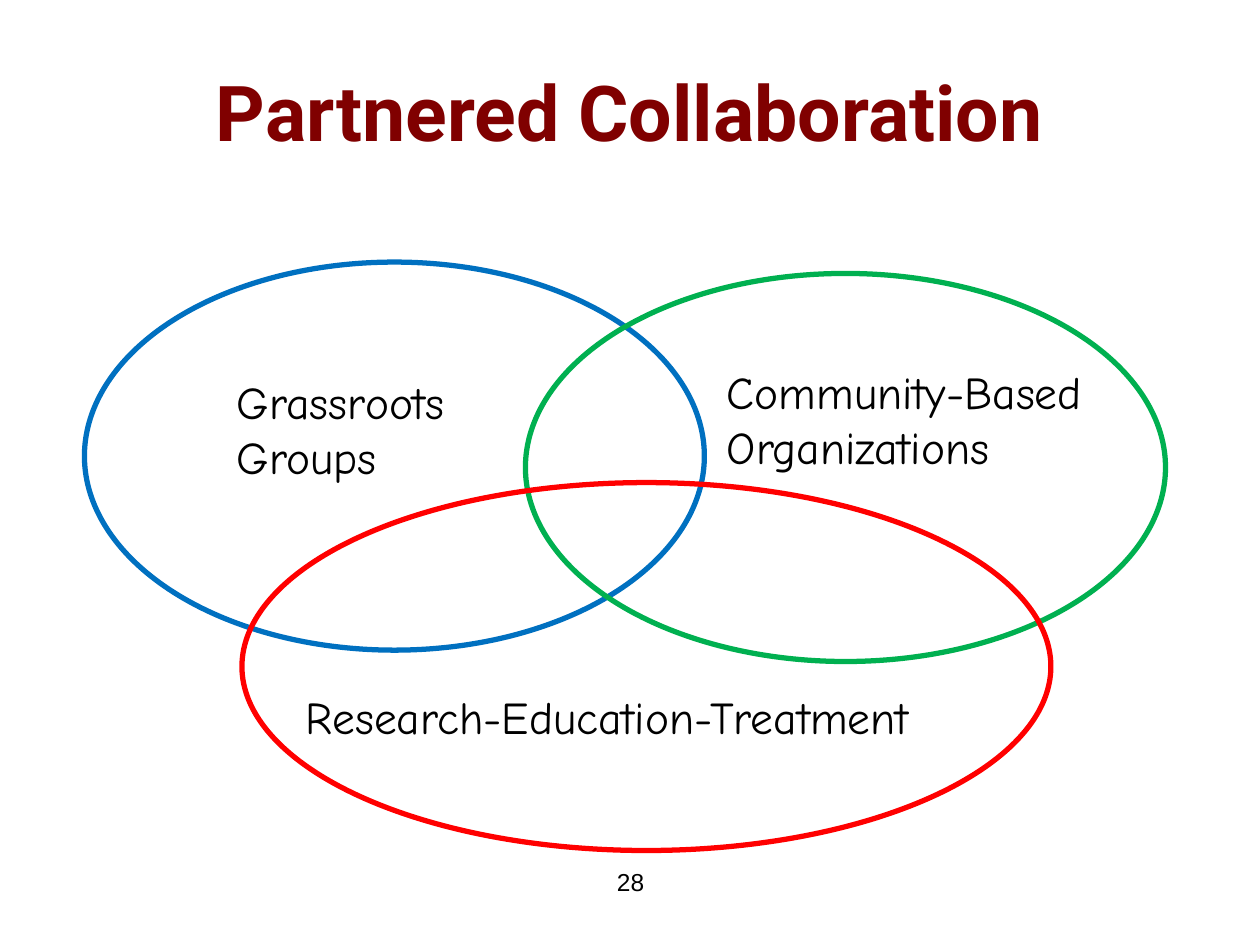
from pptx import Presentation
from pptx.dml.color import RGBColor
from pptx.enum.shapes import MSO_SHAPE
from pptx.enum.text import MSO_ANCHOR, MSO_AUTO_SIZE, PP_ALIGN
from pptx.util import Inches, Pt


def color(value):
    return RGBColor.from_string(value)


def write(paragraph, text, font_name, size, value="000000", bold=False):
    span = paragraph.add_run()
    span.text = text
    span.font.name = font_name
    span.font.size = Pt(size)
    span.font.bold = bold
    span.font.color.rgb = color(value)


deck = Presentation()
deck.slide_width = Inches(10)
deck.slide_height = Inches(7.5)
page = deck.slides.add_slide(deck.slide_layouts[5])

title = page.shapes.title
title.left, title.top = Inches(0.75), Inches(0.25)
title.width, title.height = Inches(8.5), Inches(1.25)
title.text_frame.vertical_anchor = MSO_ANCHOR.MIDDLE
heading = title.text_frame.paragraphs[0]
heading.alignment = PP_ALIGN.CENTER
write(heading, "Partnered Collaboration", "Roboto", 44, "800000", True)

ellipses = [
    (0.67, 2.08, 4.92, 3.08, "0070C0"),
    (4.17, 2.17, 5.08, 3.08, "00B050"),
    (1.92, 3.83, 6.42, 2.92, "FF0000"),
]
for left, top, width, height, outline in ellipses:
    ellipse = page.shapes.add_shape(
        MSO_SHAPE.OVAL, Inches(left), Inches(top), Inches(width), Inches(height)
    )
    ellipse.shadow.inherit = False
    ellipse.fill.background()
    ellipse.line.color.rgb = color(outline)
    ellipse.line.width = Pt(3)

labels = [
    (["Research-Education-Treatment"], 2.33, 5.42, 5.72, 0.53, False),
    (["Grassroots Groups"], 1.78, 2.92, 2.25, 0.97, True),
    (["Community-Based", "Organizations"], 5.67, 2.84, 3.26, 0.97, False),
]
for lines, left, top, width, height, wrap in labels:
    box = page.shapes.add_textbox(Inches(left), Inches(top), Inches(width), Inches(height))
    frame = box.text_frame
    frame.word_wrap = wrap
    frame.auto_size = MSO_AUTO_SIZE.SHAPE_TO_FIT_TEXT
    for index, line in enumerate(lines):
        para = frame.add_paragraph() if index else frame.paragraphs[0]
        write(para, line, "Comic Neue", 26)

number_box = page.shapes.add_textbox(Inches(3.42), Inches(6.83), Inches(3.17), Inches(0.52))
number_box.text_frame.word_wrap = True
number = number_box.text_frame.paragraphs[0]
number.alignment = PP_ALIGN.CENTER
write(number, "28", "Arial", 14)

deck.save("out.pptx")
